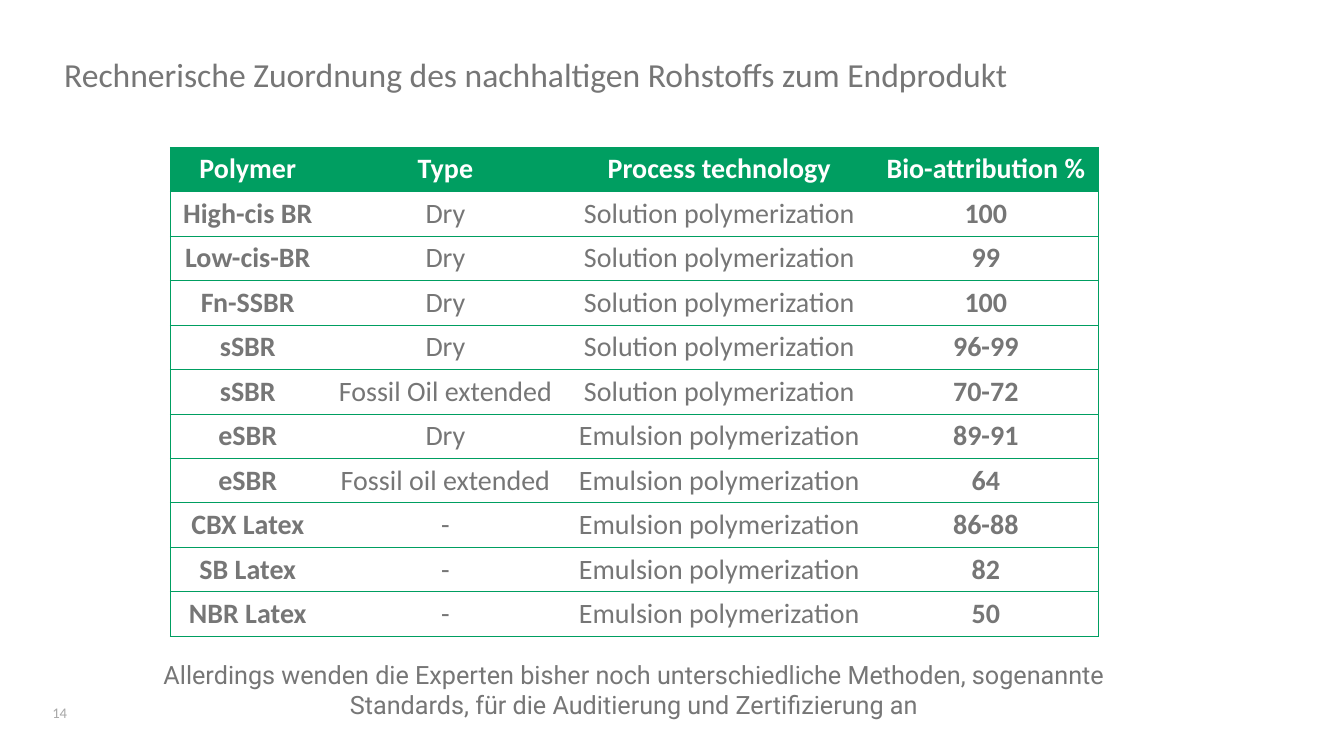
from lxml.etree import SubElement
from pptx import Presentation
from pptx.dml.color import RGBColor
from pptx.enum.text import MSO_ANCHOR, PP_ALIGN
from pptx.oxml.ns import qn
from pptx.util import Cm, Pt

GREEN = RGBColor(0x00, 0x9E, 0x61)
GREY = RGBColor(0x76, 0x76, 0x76)
LIGHT_GREY = RGBColor(0xA7, 0xA7, 0xA7)
WHITE = RGBColor(0xFF, 0xFF, 0xFF)

COLUMN_WIDTHS = (3.91, 6.05, 7.75, 5.69)
ROW_HEIGHT = 1.12
HEADER = ("Polymer", "Type", "Process technology", "Bio-attribution %")
SOLUTION = "Solution polymerization"
EMULSION = "Emulsion polymerization"
POLYMERS = (
    ("High-cis BR", "Dry", SOLUTION, "100"),
    ("Low-cis-BR", "Dry", SOLUTION, "99"),
    ("Fn-SSBR", "Dry", SOLUTION, "100"),
    ("sSBR", "Dry", SOLUTION, "96-99"),
    ("sSBR", "Fossil Oil extended", SOLUTION, "70-72"),
    ("eSBR", "Dry", EMULSION, "89-91"),
    ("eSBR", "Fossil oil extended", EMULSION, "64"),
    ("CBX Latex", "-", EMULSION, "86-88"),
    ("SB Latex", "-", EMULSION, "82"),
    ("NBR Latex", "-", EMULSION, "50"),
)


def format_paragraph(paragraph, size, color, font_name="Calibri",
                     bold=False, alignment=PP_ALIGN.LEFT):
    paragraph.alignment = alignment
    for run in paragraph.runs:
        run.font.name = font_name
        run.font.size = Pt(size)
        run.font.bold = bold
        run.font.color.rgb = color


def add_text(slide, box, text, size, color, anchor=MSO_ANCHOR.MIDDLE, **style):
    """Add a wrapped text box; box is left, top, width, height in cm."""
    text_frame = slide.shapes.add_textbox(*map(Cm, box)).text_frame
    text_frame.word_wrap = True
    text_frame.vertical_anchor = anchor
    text_frame.text = text
    paragraph = text_frame.paragraphs[0]
    format_paragraph(paragraph, size, color, **style)
    return paragraph


def set_borders(cell, visible_sides):
    """Draw green lines on the given sides and hide the others."""
    properties = cell._tc.get_or_add_tcPr()
    for side in "LRTB":
        line = SubElement(properties, qn(f"a:ln{side}"), w=str(Pt(0.5)))
        if side in visible_sides:
            fill = SubElement(line, qn("a:solidFill"))
            SubElement(fill, qn("a:srgbClr"), val=str(GREEN))
        else:
            SubElement(line, qn("a:noFill"))


def add_polymer_table(slide, left, top):
    rows = (HEADER,) + POLYMERS
    last_column = len(HEADER) - 1
    table = slide.shapes.add_table(
        len(rows), len(HEADER), Cm(left), Cm(top),
        Cm(sum(COLUMN_WIDTHS)), Cm(ROW_HEIGHT * len(rows))).table
    table.horz_banding = False
    for column, width in zip(table.columns, COLUMN_WIDTHS):
        column.width = Cm(width)
    for row_index, values in enumerate(rows):
        table.rows[row_index].height = Cm(ROW_HEIGHT)
        is_header = row_index == 0
        for column_index, value in enumerate(values):
            is_outer = column_index in (0, last_column)
            cell = table.cell(row_index, column_index)
            cell.text = value
            format_paragraph(cell.text_frame.paragraphs[0], 20,
                             WHITE if is_header else GREY,
                             bold=is_header or is_outer,
                             alignment=PP_ALIGN.CENTER)
            outer_side = {0: "L", last_column: "R"}.get(column_index, "")
            set_borders(cell, "TB" + outer_side)
            if is_header:
                cell.fill.solid()
                cell.fill.fore_color.rgb = GREEN
            else:
                cell.fill.background()


def build_table_slide(presentation):
    slide = presentation.slides.add_slide(presentation.slide_layouts[6])
    title = add_text(
        slide, (1.37, 1.27, 27.53, 1.3),
        "Rechnerische Zuordnung des nachhaltigen Rohstoffs zum Endprodukt",
        24, GREY)
    title.line_spacing = 0.9
    add_text(slide, (1.07, 17.6, 1.85, 0.71), "14", 10.5, LIGHT_GREY)
    add_polymer_table(slide, 4.29, 3.71)
    add_text(
        slide, (3.33, 16.48, 25.3, 1.8),
        "Allerdings wenden die Experten bisher noch unterschiedliche Methoden, "
        "sogenannte Standards, für die Auditierung und Zertifizierung an",
        18, GREY, anchor=MSO_ANCHOR.TOP, font_name="Roboto",
        alignment=PP_ALIGN.CENTER)


def main():
    presentation = Presentation()
    presentation.slide_width = Cm(33.87)
    presentation.slide_height = Cm(19.05)
    build_table_slide(presentation)
    presentation.save("out.pptx")


if __name__ == "__main__":
    main()
